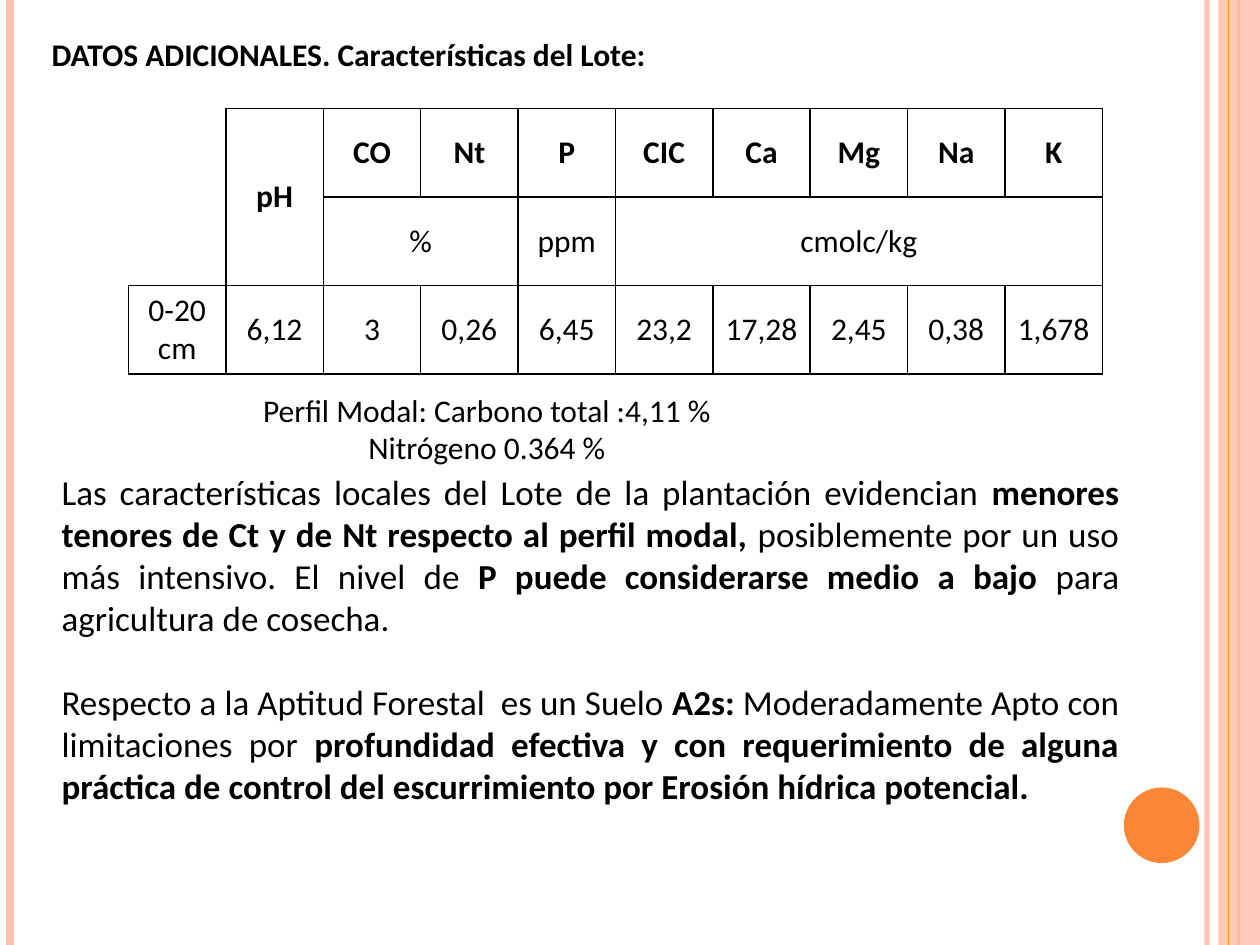
from lxml.etree import SubElement
from pptx import Presentation
from pptx.dml.color import RGBColor
from pptx.enum.shapes import MSO_CONNECTOR, MSO_SHAPE
from pptx.enum.text import MSO_ANCHOR, MSO_AUTO_SIZE, PP_ALIGN
from pptx.oxml.ns import qn
from pptx.util import Inches, Pt

ORANGE, PEACH, BLACK = "FE8637", "FEC3AE", "000000"

RAILS = [(9.58, PEACH, 3, 93), (0.08, PEACH, 4.5, 100), (9.83, ORANGE, 1.5, 100)]

SOIL_ROWS = [
    ["", "pH", "CO", "Nt", "P", "CIC", "Ca", "Mg", "Na", "K"],
    ["", "", "%", "", "ppm", "cmolc/kg", "", "", "", ""],
    ["0-20 cm", "6,12", "3", "0,26", "6,45", "23,2", "17,28", "2,45", "0,38", "1,678"],
]
SOIL_MERGES = [((0, 0), (1, 0)), ((0, 1), (1, 1)), ((1, 2), (1, 3)), ((1, 5), (1, 9))]

HEADING = [[("DATOS ADICIONALES. Características del Lote:", True)]]
PROFILE = [
    [("Perfil Modal: Carbono total :4,11 %", False)],
    [("Nitrógeno 0.364 %", False)],
]
ANALYSIS = [
    [
        ("Las características locales del Lote de la plantación evidencian ", False),
        ("menores tenores de Ct y de Nt respecto al perfil modal, ", True),
        ("posiblemente por un uso más intensivo. El nivel de ", False),
        ("P puede considerarse medio a bajo ", True),
        ("para agricultura de cosecha. ", False),
    ],
    [
        ("Respecto a la Aptitud Forestal  es un Suelo ", False),
        ("A2s: ", True),
        ("Moderadamente Apto con limitaciones por ", False),
        ("profundidad efectiva y con requerimiento de alguna práctica de control "
         "del escurrimiento por Erosión hídrica potencial.", True),
    ],
]


def color(value):
    return RGBColor.from_string(value)


def apply(target, values):
    for name, value in values.items():
        setattr(target, name, value)


class SlideBuilder:
    """Draws styled elements on the current slide."""

    font = "Calibri"

    def __init__(self, deck):
        self.slide = deck.slides.add_slide(deck.slide_layouts[5])

    def fill_frame(self, frame, paragraphs, size, align, gap=0, after=0):
        for index, spans in enumerate(paragraphs):
            para = frame.add_paragraph() if index else frame.paragraphs[0]
            apply(para, {"alignment": align, "space_before": Pt(gap if index else 0),
                         "space_after": Pt(after)})
            for text, bold in spans:
                span = para.add_run()
                span.text = text
                apply(span.font, {"name": self.font, "size": Pt(size), "bold": bold})
                span.font.color.rgb = color(BLACK)

    def fade(self, shape, opacity):
        if opacity < 100:
            for tint in shape._element.spPr.iter(qn("a:srgbClr")):
                SubElement(tint, qn("a:alpha"), val=str(opacity * 1000))

    def rail(self, x, tint, width, opacity=100):
        line = self.slide.shapes.add_connector(
            MSO_CONNECTOR.STRAIGHT, Inches(x), 0, Inches(x), Inches(7.5))
        line.line.color.rgb = color(tint)
        line.line.width = Pt(width)
        self.fade(line, opacity)
        SubElement(line._element.spPr, qn("a:effectLst"))

    def shape(self, kind, bounds, tint, opacity=100):
        shape = self.slide.shapes.add_shape(kind, *map(Inches, bounds))
        shape.shadow.inherit = False
        shape.fill.solid()
        shape.fill.fore_color.rgb = color(tint)
        shape.line.fill.background()
        self.fade(shape, opacity)

    def place_text(self, box, bounds, paragraphs, size, align, anchor, gap=0):
        left, top, width, height = map(Inches, bounds)
        apply(box, {"left": left, "top": top, "width": width, "height": height})
        apply(box.text_frame, {"word_wrap": True, "vertical_anchor": anchor,
                               "auto_size": MSO_AUTO_SIZE.SHAPE_TO_FIT_TEXT})
        self.fill_frame(box.text_frame, paragraphs, size, align, gap)

    def title(self, *args):
        self.place_text(self.slide.shapes.title, *args)

    def text(self, bounds, *args, **options):
        box = self.slide.shapes.add_textbox(*map(Inches, bounds))
        self.place_text(box, bounds, *args, **options)

    def border(self, cell, sides):
        properties = cell._tc.get_or_add_tcPr()
        for side in "LRTB":
            line = SubElement(properties, qn(f"a:ln{side}"), w=str(Pt(1)))
            if side in sides:
                fill = SubElement(line, qn("a:solidFill"))
                SubElement(fill, qn("a:srgbClr"), val=BLACK)
            else:
                SubElement(line, qn("a:noFill"))

    def table(self, bounds, rows, merges):
        frame = self.slide.shapes.add_table(len(rows), len(rows[0]), *map(Inches, bounds))
        table = frame.table
        apply(table, {"first_row": False, "horz_banding": False})
        for start, end in merges:
            table.cell(*start).merge(table.cell(*end))
        for row, texts in enumerate(rows):
            for column, text in enumerate(texts):
                cell = table.cell(row, column)
                apply(cell, {"vertical_anchor": MSO_ANCHOR.MIDDLE,
                             "margin_left": Inches(0.07), "margin_right": Inches(0.07),
                             "margin_top": 0, "margin_bottom": 0})
                corner = column == 0 and row < 2
                self.border(cell, "RB" if corner else "LRTB")
                cell.fill.background()
                if text:
                    self.fill_frame(cell.text_frame, [[(text, row == 0)]], 18,
                                    PP_ALIGN.CENTER, after=6)


def main():
    deck = Presentation()
    apply(deck, {"slide_width": Inches(10), "slide_height": Inches(7.5)})
    page = SlideBuilder(deck)
    for rail in RAILS:
        page.rail(*rail)
    page.shape(MSO_SHAPE.RECTANGLE, (9.67, 0, 0.33, 7.5), PEACH, 87)
    page.rail(9.75, ORANGE, 0.75)
    page.shape(MSO_SHAPE.OVAL, (8.92, 6.25, 0.6, 0.6), ORANGE)
    page.table((1.02, 0.86, 7.73, 2.11), SOIL_ROWS, SOIL_MERGES)
    page.title((0.31, 0.23, 9.3, 0.4), HEADING, 18, PP_ALIGN.JUSTIFY, MSO_ANCHOR.MIDDLE)
    page.text((0.39, 3.67, 8.59, 2.79), ANALYSIS, 20, PP_ALIGN.JUSTIFY,
              MSO_ANCHOR.MIDDLE, gap=24)
    page.text((1.95, 3.05, 3.83, 0.71), PROFILE, 18, PP_ALIGN.CENTER, MSO_ANCHOR.TOP)
    deck.save("out.pptx")


if __name__ == "__main__":
    main()
